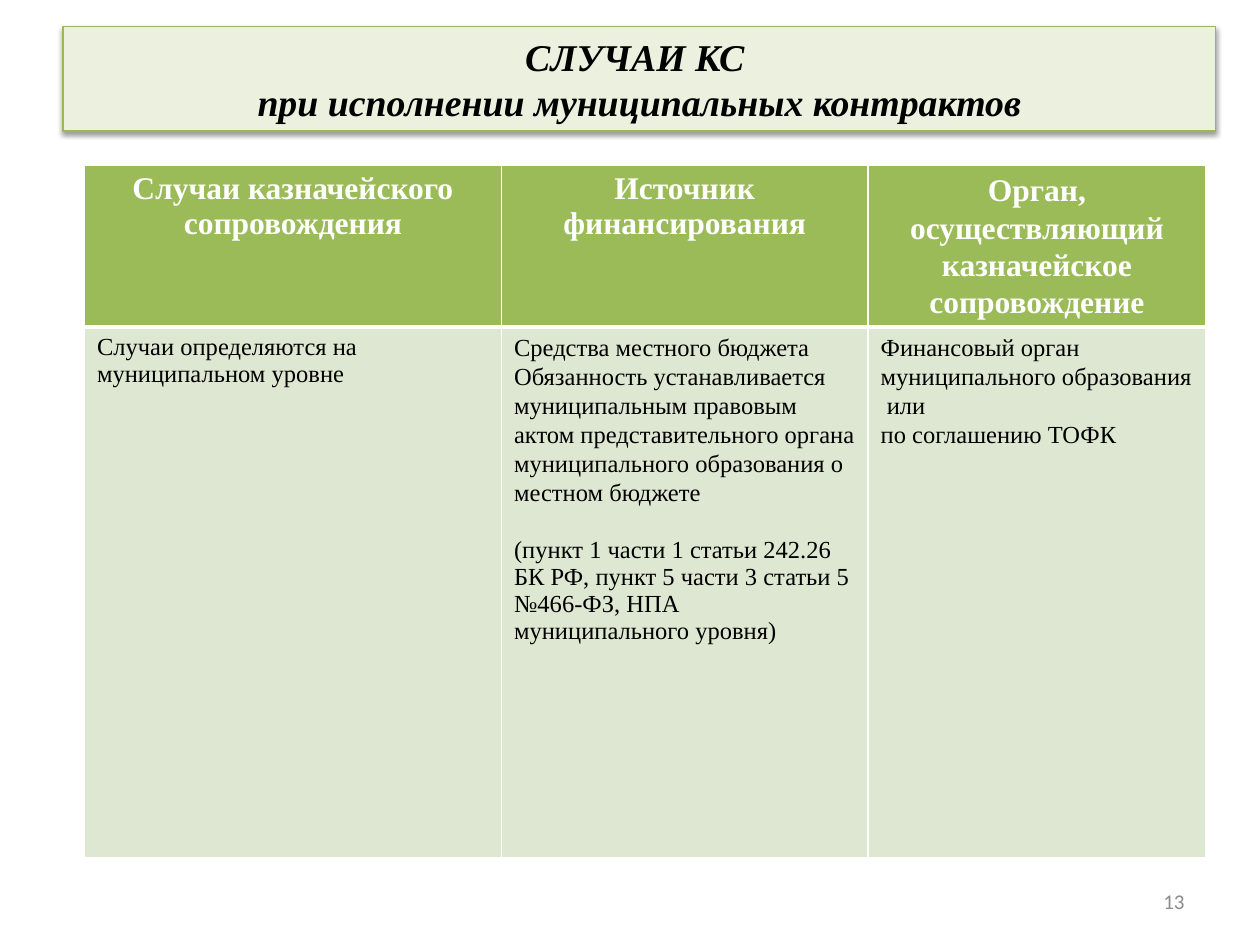
from dataclasses import dataclass

from lxml.etree import SubElement
from pptx import Presentation
from pptx.dml.color import RGBColor
from pptx.enum.shapes import MSO_SHAPE as Shape
from pptx.enum.text import MSO_ANCHOR as Anchor, PP_ALIGN as Align
from pptx.oxml.ns import qn
from pptx.util import Inches, Pt


@dataclass(frozen=True)
class Theme:
    serif: str = "Times New Roman"
    sans: str = "Calibri"
    black: str = "000000"
    white: str = "FFFFFF"
    grey: str = "8C8C8C"
    green: str = "9BBB59"
    outline: str = "98B955"
    banner: str = "EBF1DE"
    pale: str = "DEE7D1"
    title: float = 21.6
    heading: float = 18
    body: float = 14
    number: float = 12


theme = Theme()


def write(para, text, size=theme.body, font=theme.serif, color=theme.black,
          bold=False, italic=False, align=Align.LEFT, spacing=1.0, before=0, after=0):
    para.text = text
    para.alignment = align
    para.line_spacing = spacing
    para.space_before, para.space_after = Pt(before), Pt(after)
    for span in para.runs:
        span.font.size, span.font.name = Pt(size), font
        span.font.bold, span.font.italic = bold, italic
        span.font.color.rgb = RGBColor.from_string(color)


def paint_cell(cell, fill, widths):
    properties = cell._tc.get_or_add_tcPr()
    for side, width in zip("LRTB", widths):
        line = SubElement(properties, qn(f"a:ln{side}"), w=str(Pt(width)))
        SubElement(SubElement(line, qn("a:solidFill")), qn("a:srgbClr"), val=theme.white)
    cell.fill.solid()
    cell.fill.fore_color.rgb = RGBColor.from_string(fill)


deck = Presentation()
deck.slide_width, deck.slide_height = Inches(10), Inches(7.5)
page = deck.slides.add_slide(deck.slide_layouts[6])

banner = page.shapes.add_shape(
    Shape.RECTANGLE, Inches(0.5), Inches(0.21), Inches(9.15), Inches(0.83))
banner.fill.solid()
banner.fill.fore_color.rgb = RGBColor.from_string(theme.banner)
banner.line.color.rgb = RGBColor.from_string(theme.outline)
banner.line.width = Pt(0.75)
banner.shadow.inherit = False
effects = banner._element.spPr.find(qn("a:effectLst"))
shadow = SubElement(effects, qn("a:outerShdw"), blurRad=str(Pt(3.1)), dist=str(Pt(1.6)),
                    dir="5400000", rotWithShape="0")
shade = SubElement(shadow, qn("a:srgbClr"), val=theme.black)
SubElement(shade, qn("a:alpha"), val="38000")
banner.text_frame.word_wrap = True
banner.text_frame.vertical_anchor = Anchor.MIDDLE
write(banner.text_frame.paragraphs[0], "СЛУЧАИ КС \vпри исполнении муниципальных контрактов",
      size=theme.title, bold=True, italic=True, align=Align.CENTER)

columns = [
    (3.31, "Случаи казначейского сопровождения", {}, [
        ("Случаи определяются на муниципальном уровне", {}),
    ]),
    (2.91, "Источник финансирования", {}, [
        ("Средства местного бюджета ", {"spacing": 1.07, "align": Align.JUSTIFY}),
        ("Обязанность устанавливается муниципальным правовым актом представительного органа "
         "муниципального образования о местном бюджете", {"spacing": 1.07}),
        ("(пункт 1 части 1 статьи 242.26 БК РФ, пункт 5 части 3 статьи 5 №466-ФЗ, "
         "НПА муниципального уровня)", {"before": 17}),
    ]),
    (2.68, "Орган, осуществляющий казначейское сопровождение", {"spacing": 1.07, "after": 8}, [
        ("Финансовый орган муниципального образования", {"spacing": 1.07}),
        (" или", {"spacing": 1.07}),
        ("по соглашению ТОФК", {"spacing": 1.07}),
    ]),
]
table = page.shapes.add_table(
    2, len(columns), Inches(0.67), Inches(1.31), Inches(8.9), Inches(5.43)).table
table.horz_banding = False
table.rows[0].height, table.rows[1].height = Inches(1.22), Inches(4.21)

for index, (width, heading, layout, lines) in enumerate(columns):
    table.columns[index].width = Inches(width)
    header, body = table.cell(0, index), table.cell(1, index)
    paint_cell(header, theme.green, (1, 1, 1, 3))
    paint_cell(body, theme.pale, (1, 1, 3, 1))
    write(header.text_frame.paragraphs[0], heading, size=theme.heading, color=theme.white,
          bold=True, align=Align.CENTER, **layout)
    for order, (text, style) in enumerate(lines):
        frame = body.text_frame
        para = frame.add_paragraph() if order else frame.paragraphs[0]
        write(para, text, **style)

number = page.shapes.add_textbox(Inches(7.17), Inches(6.95), Inches(2.33), Inches(0.4))
number.text_frame.word_wrap = True
number.text_frame.vertical_anchor = Anchor.MIDDLE
write(number.text_frame.paragraphs[0], "13", size=theme.number, font=theme.sans,
      color=theme.grey, align=Align.RIGHT)

deck.save("out.pptx")
